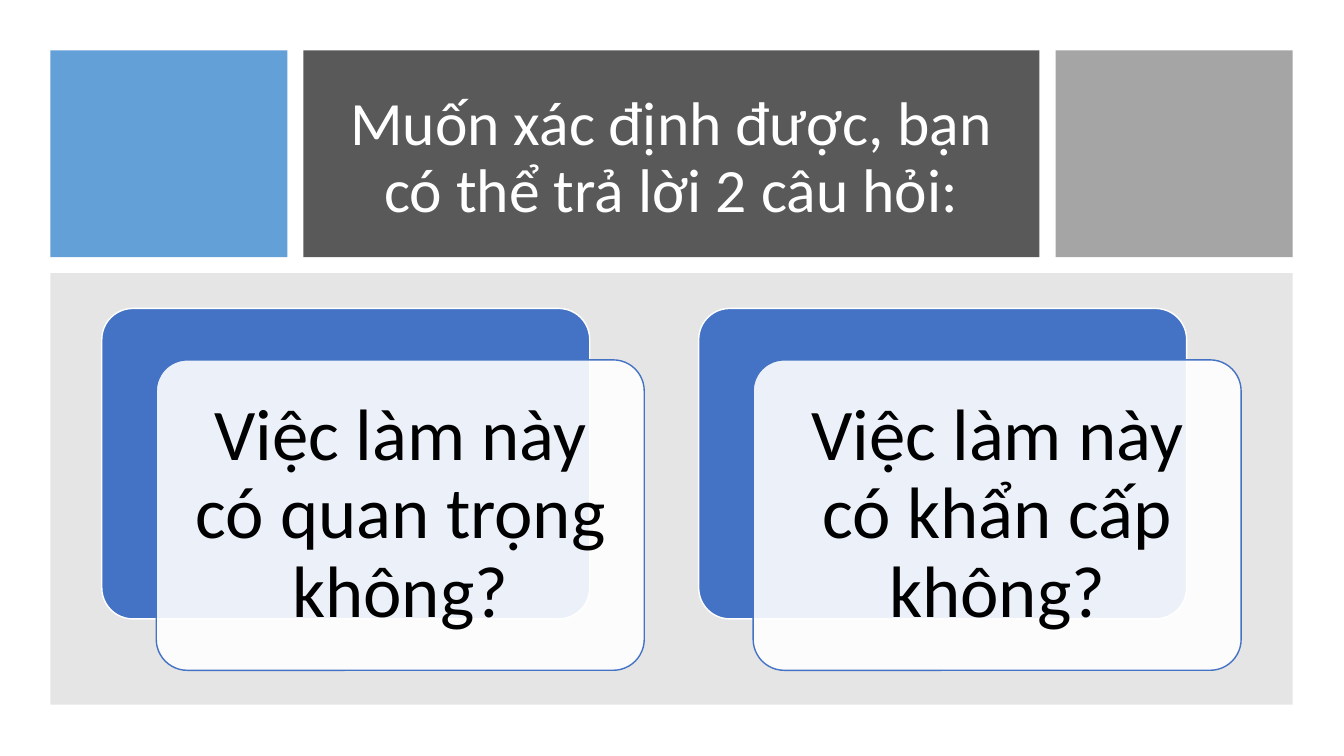
from pptx import Presentation
from pptx.dml.color import RGBColor
from pptx.enum.shapes import MSO_SHAPE
from pptx.enum.text import MSO_ANCHOR, MSO_AUTO_SIZE, PP_ALIGN
from pptx.oxml.ns import qn
from pptx.util import Inches, Pt
from lxml import etree

WHITE = RGBColor(0xFF, 0xFF, 0xFF)
BLACK = RGBColor(0x00, 0x00, 0x00)
SKY = RGBColor(0x5B, 0x9B, 0xD5)
CHARCOAL = RGBColor(0x59, 0x59, 0x59)
SILVER = RGBColor(0xA5, 0xA5, 0xA5)
GRAY = RGBColor(0x80, 0x80, 0x80)
BLUE = RGBColor(0x44, 0x72, 0xC4)


def add_box(kind, left, top, width, height, color, opacity=100, line=None):
    box = page.shapes.add_shape(
        kind, Inches(left), Inches(top), Inches(width), Inches(height))
    box.shadow.inherit = False
    box.fill.solid()
    box.fill.fore_color.rgb = color
    if opacity < 100:
        srgb = box.fill._xPr.find(".//" + qn("a:srgbClr"))
        etree.SubElement(srgb, qn("a:alpha")).set("val", str(opacity * 1000))
    if line is None:
        box.line.fill.background()
    else:
        box.line.color.rgb = line
        box.line.width = Pt(1)
    return box


def write_text(box, text, size, color, inset):
    frame = box.text_frame
    frame.word_wrap = True
    frame.auto_size = MSO_AUTO_SIZE.NONE
    frame.vertical_anchor = MSO_ANCHOR.MIDDLE
    frame.margin_left = frame.margin_right = Inches(inset)
    frame.margin_top = frame.margin_bottom = Inches(inset)
    para = frame.paragraphs[0]
    para.alignment = PP_ALIGN.CENTER
    para.line_spacing = 0.9
    span = para.add_run()
    span.text = text
    span.font.name = "Calibri"
    span.font.size = Pt(size)
    span.font.color.rgb = color


deck = Presentation()
deck.slide_width = Inches(13.33)
deck.slide_height = Inches(7.5)
page = deck.slides.add_slide(deck.slide_layouts[5])

# Header panels and the backdrop below them
for left, top, width, height, color, opacity in [
    (0.5, 0.5, 2.35, 2.05, SKY, 95),
    (3.01, 0.5, 7.3, 2.05, CHARCOAL, 100),
    (10.47, 0.5, 2.35, 2.05, SILVER, 100),
    (0.5, 2.71, 12.32, 4.28, GRAY, 20),
]:
    add_box(MSO_SHAPE.RECTANGLE, left, top, width, height, color, opacity)

# Title, brought in front of its panel
title = page.shapes.title
title.left, title.top = Inches(3.33), Inches(0.8)
title.width, title.height = Inches(6.66), Inches(1.56)
write_text(title, "Muốn xác định được, bạn có thể trả lời 2 câu hỏi:", 44, WHITE, 0.1)
title.element.getparent().append(title.element)

# Question cards: a blue plate with a translucent card offset over it
questions = ["Việc làm này có quan trọng không?", "Việc làm này có khẩn cấp không?"]
for index, question in enumerate(questions):
    left = 1.01 + index * 5.92
    plate = add_box(MSO_SHAPE.ROUNDED_RECTANGLE, left, 3.06, 4.84, 3.08, BLUE, line=WHITE)
    card = add_box(MSO_SHAPE.ROUNDED_RECTANGLE, left + 0.54, 3.57, 4.84, 3.08, WHITE, 90, BLUE)
    plate.adjustments[0] = card.adjustments[0] = 0.1
    write_text(card, question, 52, BLACK, 0.22)

deck.save("out.pptx")
